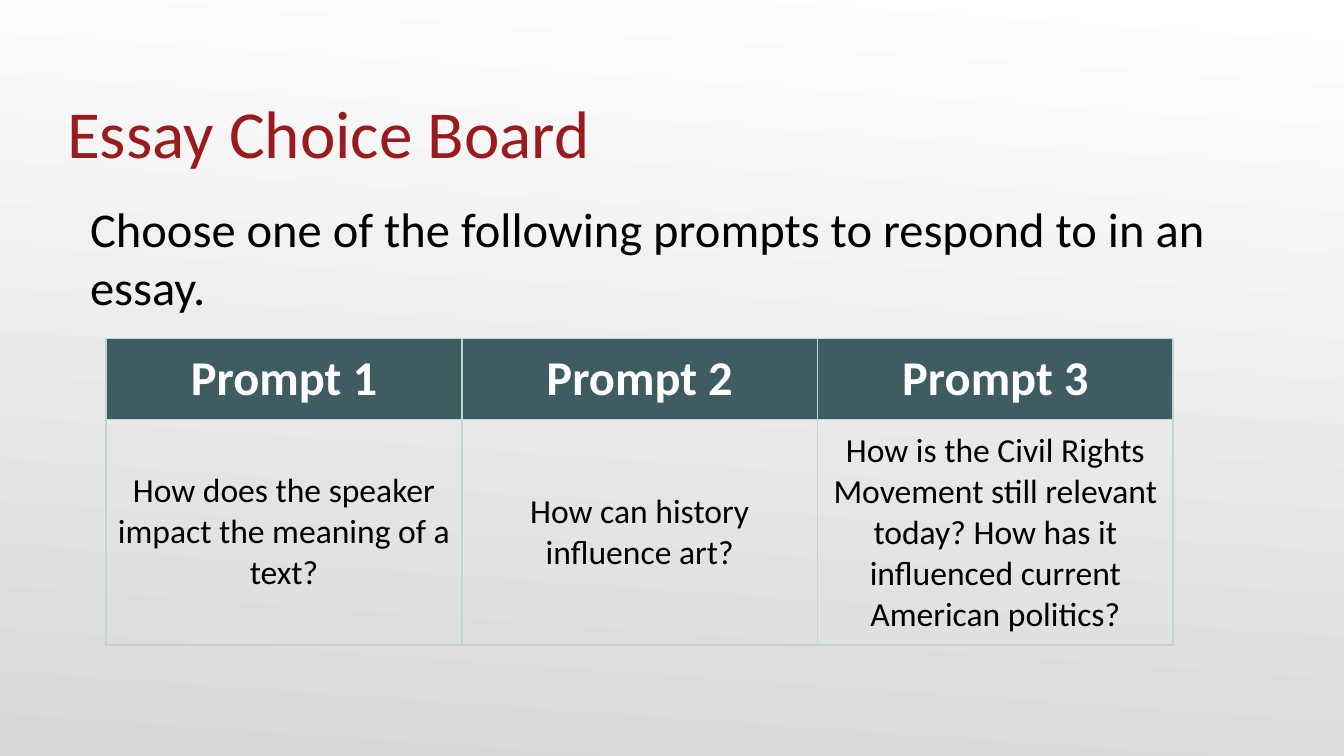
from lxml import etree
from pptx import Presentation
from pptx import util as u
from pptx.dml.color import RGBColor
from pptx.enum import text
from pptx.oxml.ns import qn

WIDTH = u.Inches(10)
HEIGHT = WIDTH * 9 // 16
FONT = "Calibri"
WHITE = RGBColor(0xFF, 0xFF, 0xFF)
GREY = RGBColor(0xD8, 0xD8, 0xD8)
BLACK = RGBColor(0x00, 0x00, 0x00)
RED = RGBColor(0x99, 0x1B, 0x1E)
TEAL = RGBColor(0x3E, 0x5C, 0x61)
MINT = RGBColor(0xBE, 0xD7, 0xD3)

PROMPTS = [
    ("Prompt 1", "How does the speaker impact the meaning of a text?"),
    ("Prompt 2", "How can history influence art?"),
    ("Prompt 3", "How is the Civil Rights Movement still relevant today? "
                 "How has it influenced current American politics?"),
]


def inches(*values):
    return [u.Inches(value) for value in values]


def write(frame, words, size, color, bold=False,
          align=text.PP_ALIGN.LEFT):
    paragraph = frame.paragraphs[0]
    paragraph.alignment = align
    run = paragraph.add_run()
    run.text = words
    run.font.name = FONT
    run.font.size = u.Pt(size)
    run.font.bold = bold
    run.font.color.rgb = color


def add_text(slide, box, words, insets, anchor=text.MSO_ANCHOR.TOP, **style):
    frame = slide.shapes.add_textbox(*inches(*box)).text_frame
    frame.word_wrap = True
    frame.vertical_anchor = anchor
    (frame.margin_left, frame.margin_top,
     frame.margin_right, frame.margin_bottom) = inches(*insets)
    write(frame, words, **style)


def outline_cell(cell, color, width):
    properties = cell._tc.get_or_add_tcPr()
    for index, side in enumerate(("a:lnL", "a:lnR", "a:lnT", "a:lnB")):
        line = etree.Element(qn(side), w=str(u.Pt(width)))
        fill = etree.SubElement(line, qn("a:solidFill"))
        etree.SubElement(fill, qn("a:srgbClr"), val=str(color))
        properties.insert(index, line)  # borders come before the fill


def paint_background(slide):
    fill = slide.background.fill
    fill.gradient()
    fill.gradient_angle = 266
    for stop, color, position in zip(fill.gradient_stops, (WHITE, GREY), (0, 1)):
        stop.color.rgb = color
        stop.position = position


def add_choice_board(slide, box, prompts, header_height):
    left, top, width, height = inches(*box)
    table = slide.shapes.add_table(2, len(prompts), left, top, width, height).table
    table.horz_banding = False
    table.rows[0].height = u.Inches(header_height)
    table.rows[1].height = height - u.Inches(header_height)

    for column, prompt in enumerate(prompts):
        for row, words in enumerate(prompt):
            is_header = row == 0
            cell = table.cell(row, column)
            cell.margin_left = cell.margin_right = u.Inches(0.08)
            cell.margin_top = cell.margin_bottom = u.Inches(0.08)
            if is_header:
                cell.fill.solid()
                cell.fill.fore_color.rgb = TEAL
            else:
                cell.fill.background()
                cell.vertical_anchor = text.MSO_ANCHOR.MIDDLE
            outline_cell(cell, MINT, 1)
            write(cell.text_frame, words, size=26 if is_header else 18,
                  color=WHITE if is_header else BLACK, bold=is_header,
                  align=text.PP_ALIGN.CENTER)


def main():
    presentation = Presentation()
    presentation.slide_width, presentation.slide_height = WIDTH, HEIGHT
    slide = presentation.slides.add_slide(presentation.slide_layouts[6])
    paint_background(slide)

    # Instruction and title
    add_text(slide, (0.5, 1.43, 9, 3.76),
             "Choose one of the following prompts to respond to in an essay.",
             insets=(0.17, 0.05, 0.1, 0.05), size=26, color=BLACK)
    add_text(slide, (0.5, 0.34, 9, 0.94), "Essay Choice Board",
             insets=(0, 0.05, 0, 0), anchor=text.MSO_ANCHOR.BOTTOM,
             size=36, color=RED)

    # Prompts
    add_choice_board(slide, (0.79, 2.52, 7.94, 2.28), PROMPTS, header_height=0.6)
    presentation.save("out.pptx")


if __name__ == "__main__":
    main()
